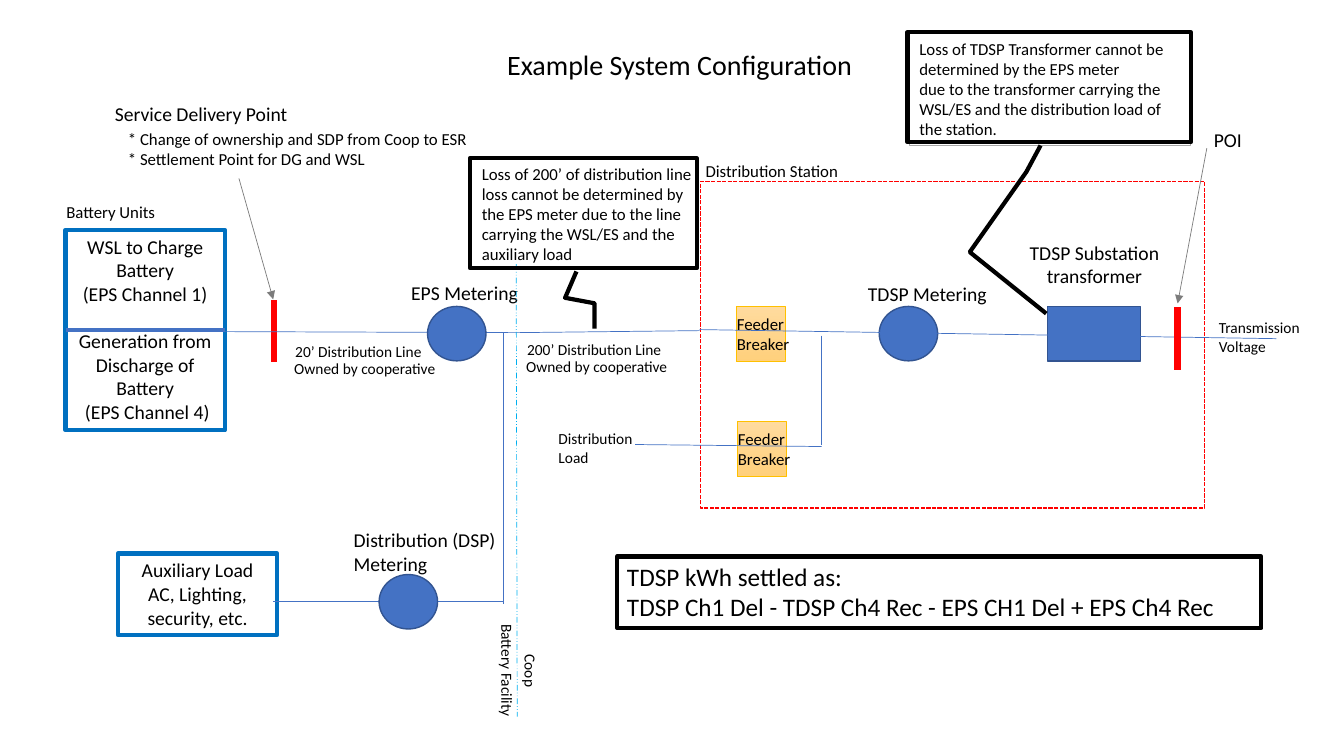
from lxml import etree
from pptx import Presentation
from pptx.dml.color import RGBColor
from pptx.enum.dml import MSO_LINE
from pptx.enum.shapes import MSO_CONNECTOR, MSO_SHAPE
from pptx.enum.text import MSO_ANCHOR, MSO_AUTO_SIZE, PP_ALIGN
from pptx.oxml.ns import qn
from pptx.util import Inches, Pt

RECTANGLE, OVAL = MSO_SHAPE.RECTANGLE, MSO_SHAPE.OVAL
CALLOUT = MSO_SHAPE.LINE_CALLOUT_3
STRAIGHT = MSO_CONNECTOR.STRAIGHT
LEFT, CENTER = PP_ALIGN.LEFT, PP_ALIGN.CENTER
TOP, NO_AUTOFIT = MSO_ANCHOR.TOP, MSO_AUTO_SIZE.NONE
SQUARE_DASH, DASH_DOT_DOT = MSO_LINE.SQUARE_DOT, MSO_LINE.DASH_DOT_DOT

FONT = "Calibri"
BLACK = RGBColor(0x00, 0x00, 0x00)
BLUE = RGBColor(0x44, 0x72, 0xC4)
DARK_BLUE = RGBColor(0x32, 0x54, 0x91)
BOX_BLUE = RGBColor(0x00, 0x70, 0xC0)
SKY_BLUE = RGBColor(0x00, 0xB0, 0xF0)
RED = RGBColor(0xFF, 0x00, 0x00)
GREY = RGBColor(0x7C, 0x7C, 0x7C)
LIGHT_GREY = RGBColor(0xA6, 0xA6, 0xA6)
GOLD = RGBColor(0xFF, 0xC0, 0x00)
PALE_ORANGE = RGBColor(0xFF, 0xDB, 0x9E)
ORANGE = RGBColor(0xFF, 0xD0, 0x7C)


def write_text(shape, lines, size, align=LEFT):
    """Fill a shape with one paragraph per line."""
    frame = shape.text_frame
    frame.word_wrap = True
    frame.auto_size = NO_AUTOFIT
    frame.vertical_anchor = TOP
    for number, line in enumerate(lines):
        paragraph = frame.add_paragraph() if number else frame.paragraphs[0]
        paragraph.alignment = align
        run = paragraph.add_run()
        run.text = line
        run.font.name = FONT
        run.font.size = Pt(size)
        run.font.color.rgb = BLACK
    return frame


def add_label(slide, box, lines, size, align=LEFT, rotation=0):
    label = slide.shapes.add_textbox(*map(Inches, box))
    label.rotation = rotation
    write_text(label, lines, size, align)


def add_box(slide, kind, box, line_color, line_width, fill=None):
    shape = slide.shapes.add_shape(kind, *map(Inches, box))
    shape.shadow.inherit = False
    if fill is None:
        shape.fill.background()
    else:
        shape.fill.solid()
        shape.fill.fore_color.rgb = fill
    shape.line.color.rgb = line_color
    shape.line.width = Pt(line_width)
    return shape


def add_line(slide, start, end, color=BLUE, width=0.5, dash=None, arrow=False):
    connector = slide.shapes.add_connector(STRAIGHT, *map(Inches, (*start, *end)))
    connector.line.color.rgb = color
    connector.line.width = Pt(width)
    if dash is not None:
        connector.line.dash_style = dash
    properties = connector._element.spPr
    if arrow:
        outline = properties.find(qn("a:ln"))
        etree.SubElement(outline, qn("a:tailEnd"), type="triangle")
    etree.SubElement(properties, qn("a:effectLst"))


def add_meter(slide, left, top):
    add_box(slide, OVAL, (left, top, 0.58, 0.54), DARK_BLUE, 1, BLUE)


def add_feeder_breaker(slide, left, top):
    breaker = add_box(slide, RECTANGLE, (left, top, 0.49, 0.55), GOLD, 0.5)
    breaker.fill.gradient()
    breaker.fill.gradient_angle = 270
    for stop, color in zip(breaker.fill.gradient_stops, (PALE_ORANGE, ORANGE)):
        stop.color.rgb = color


def add_title(slide, left, top, width, height):
    title = slide.shapes.title
    title.left, title.top = Inches(left), Inches(top)
    title.width, title.height = Inches(width), Inches(height)
    write_text(title, ["Example System Configuration"], 20, CENTER)


def add_battery_units(slide, left, top, width, height):
    battery = add_box(slide, RECTANGLE, (left, top, width, height), BOX_BLUE, 3)
    frame = write_text(battery, [
        "WSL to Charge Battery", "(EPS Channel 1)",
        "Generation from Discharge of Battery", " (EPS Channel 4)"], 14, CENTER)
    frame.paragraphs[1].space_after = Pt(17)
    middle = top + height / 2
    add_line(slide, (left, middle), (left + width, middle), BLUE, 3)
    add_label(slide, (left - 0.09, top - 0.33, 1.66, 0.3), ["Battery Units"], 12)


def add_service_delivery_point(slide, left, top):
    add_label(slide, (left, top, 3.59, 0.34), ["Service Delivery Point"], 14)
    add_label(slide, (left + 0.13, top + 0.27, 3.59, 0.5), [
        "* Change of ownership and SDP from Coop to ESR",
        "* Settlement Point for DG and WSL"], 12)
    bar_x, bar_top = left + 1.68, top + 2.02
    add_line(slide, (bar_x, bar_top), (bar_x, bar_top + 0.61), RED, 4.5)
    add_line(slide, (left + 1.33, top + 0.81), (bar_x - 0.01, bar_top - 0.01),
             GREY, arrow=True)


def add_distribution_line(slide, left, top):
    """Line from the battery units to the station, with the EPS meter."""
    add_line(slide, (left, top), (left + 2.9, top + 0.01))
    add_line(slide, (left + 2.9, top + 0.01), (left + 4.71, top - 0.01))
    add_meter(slide, left + 2.01, top - 0.25)
    add_label(slide, (left + 1.75, top - 0.55, 1.66, 0.34), ["EPS Metering"], 14)
    for length, offset_x, offset_y in (("20’", 0.6, 0.05), ("200’", 2.9, 0.03)):
        label_left, label_top = left + offset_x, top + offset_y
        add_label(slide, (label_left, label_top, 1.66, 0.29),
                  [f"{length} Distribution Line"], 11)
        add_label(slide, (label_left - 0.01, label_top + 0.17, 1.66, 0.29),
                  ["Owned by cooperative"], 11)


def add_auxiliary_load(slide, left, top, width, height):
    auxiliary = add_box(slide, RECTANGLE, (left, top, width, height), BOX_BLUE, 3)
    write_text(auxiliary, ["Auxiliary Load", "AC, Lighting, security, etc."], 14, CENTER)
    # Feed from the distribution line through the DSP meter
    riser_x, feed_y = left + 3.82, top + 0.48
    add_line(slide, (riser_x, top - 2.19), (riser_x, feed_y + 0.02))
    add_line(slide, (left + width - 0.04, feed_y), (riser_x, feed_y))
    add_meter(slide, left + 2.59, top + 0.21)
    add_label(slide, (left + 2.24, top - 0.3, 1.66, 0.57),
              ["Distribution (DSP) Metering"], 14)


def add_ownership_boundary(slide, left, top, height):
    add_line(slide, (left, top), (left + 0.01, top + height),
             SKY_BLUE, dash=DASH_DOT_DOT)
    add_label(slide, (left - 0.74, top + 3.98, 1.3, 0.29), ["Battery Facility"], 11, rotation=90)
    add_label(slide, (left - 0.51, top + 4.28, 1.3, 0.29), ["Coop"], 11, rotation=90)


def add_distribution_station(slide, left, top, width, height):
    border = add_box(slide, RECTANGLE, (left, top, width, height), RED, 1)
    border.line.dash_style = SQUARE_DASH
    add_label(slide, (left - 0.05, top - 0.25, 1.66, 0.3), ["Distribution Station"], 12)
    # Equipment on the main line
    equipment_top = top + 1.24
    breaker_places = ((left + 0.35, equipment_top), (left + 0.36, top + 2.38))
    for place in breaker_places:
        add_feeder_breaker(slide, *place)
    add_meter(slide, left + 1.77, equipment_top)
    add_box(slide, RECTANGLE, (left + 3.44, equipment_top, 0.92, 0.54), DARK_BLUE, 1, BLUE)
    add_label(slide, (left + 1.56, top + 0.95, 1.91, 0.34), ["TDSP Metering"], 14)
    add_label(slide, (left + 2.95, top + 0.54, 1.91, 0.57),
              ["TDSP Substation transformer"], 14, CENTER)
    add_line(slide, (left - 0.01, top + 1.47), (left + 5.71, top + 1.56))
    # Branch to the distribution load
    branch_x = left + 1.2
    add_line(slide, (branch_x, top + 1.53), (branch_x, top + 2.61))
    add_line(slide, (left - 0.65, top + 2.61), (branch_x, top + 2.63))
    add_label(slide, (left - 1.51, top + 2.41, 1.03, 0.47), ["Distribution", "Load"], 11)
    for breaker_left, breaker_top in breaker_places:
        add_label(slide, (breaker_left - 0.09, breaker_top + 0.02, 0.84, 0.5),
                  ["Feeder", "Breaker"], 12)
    # Point of interconnection and transmission side
    poi_x = left + 4.73
    add_line(slide, (poi_x, top + 1.25), (poi_x, top + 1.87), RED, 4.5)
    add_line(slide, (poi_x + 0.29, top - 0.33), (poi_x, top + 1.21), GREY, arrow=True)
    add_label(slide, (left + 4.99, top - 0.58, 0.65, 0.34), ["POI"], 14)
    add_label(slide, (left + 5.04, top + 1.31, 1.66, 0.47), ["Transmission", "Voltage"], 11)


def add_callout(slide, left, top, width, height, bends):
    callout = add_box(slide, CALLOUT, (left, top, width, height), BLACK, 3)
    for index, value in enumerate((1.03, 0.47, 1.27, 0.42, *bends)):
        callout.adjustments[index] = value


def add_line_loss_note(slide, left, top, width, height):
    add_label(slide, (left + 0.02, top, width + 0.06, height + 0.02), [
        "Loss of 200’ of distribution line loss cannot be determined by the EPS meter "
        "due to the line carrying the WSL/ES and the auxiliary load"], 12)
    add_callout(slide, left, top, width, height, (1.32, 0.55, 1.55, 0.55))


def add_transformer_loss_note(slide, left, top, width, height):
    note = add_box(slide, RECTANGLE, (left + 0.02, top + 0.01, width - 0.02, height + 0.02),
                   LIGHT_GREY, 0.75)
    write_text(note, [
        "Loss of TDSP Transformer cannot be determined by the EPS meter",
        "due to the transformer carrying the WSL/ES and the distribution load "
        "of the station."], 12)
    add_callout(slide, left, top, width, height, (2, 0.22, 2.56, 0.49))


def add_settlement_formula(slide, left, top, width, height):
    formula = add_box(slide, RECTANGLE, (left, top, width, height), BLACK, 3)
    write_text(formula, ["TDSP kWh settled as:",
                         "TDSP Ch1 Del - TDSP Ch4 Rec - EPS CH1 Del + EPS Ch4 Rec"], 18)


def main():
    presentation = Presentation()
    presentation.slide_width, presentation.slide_height = Inches(13.33), Inches(7.5)
    slide = presentation.slides.add_slide(presentation.slide_layouts[5])
    add_title(slide, 4.24, 0.42, 5, 0.44)
    add_battery_units(slide, 0.65, 2.28, 1.58, 1.99)
    add_distribution_station(slide, 6.95, 1.8, 5, 3.24)
    add_service_delivery_point(slide, 1.04, 0.96)
    add_distribution_line(slide, 2.23, 3.29)
    add_auxiliary_load(slide, 1.17, 5.49, 1.58, 0.81)
    add_ownership_boundary(slide, 5.12, 2.62, 4.49)
    add_settlement_formula(slide, 6.12, 5.52, 6.39, 0.71)
    add_line_loss_note(slide, 4.66, 1.57, 2.25, 1.09)
    add_transformer_loss_note(slide, 9, 0.32, 2.81, 1.09)
    presentation.save("out.pptx")


if __name__ == "__main__":
    main()
